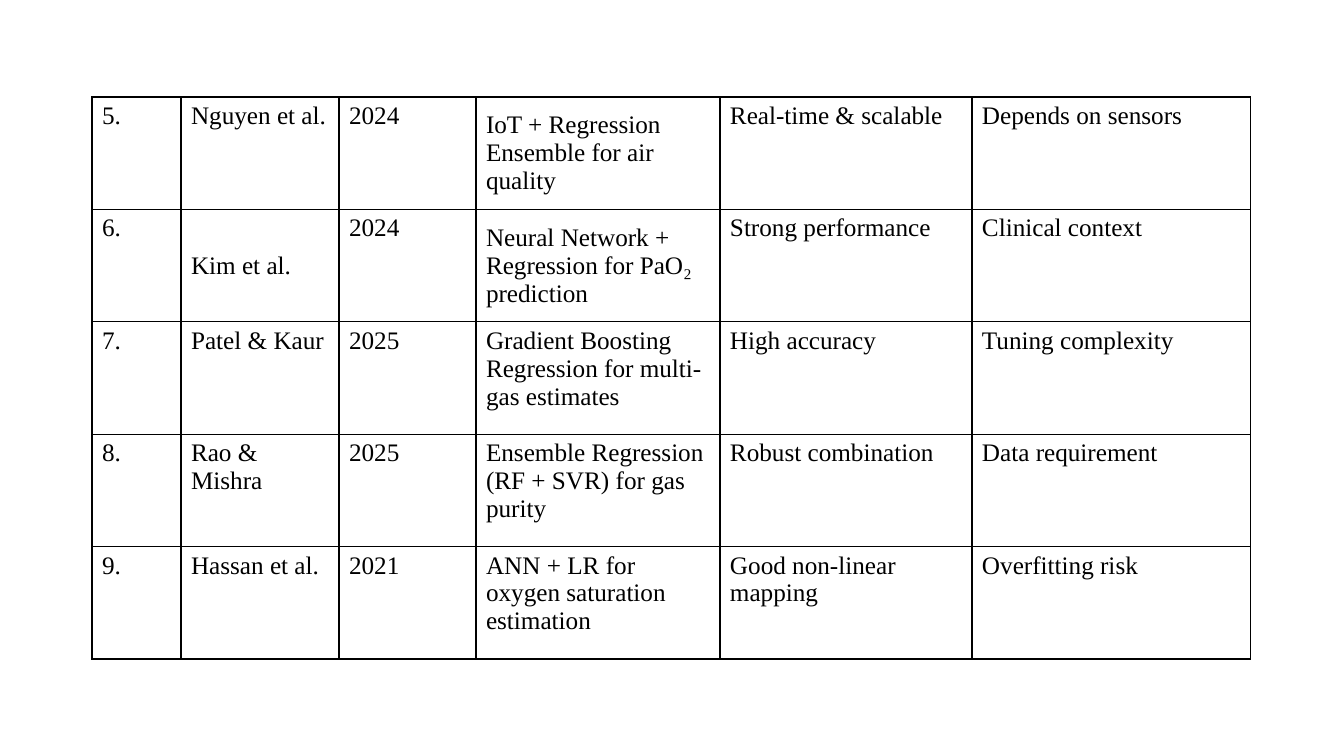
import pptx
import pptx.util
import pptx.dml.color
import pptx.enum.text
import pptx.oxml
import pptx.oxml.ns

PX = 914400 / 100.8
THEME = {"font": "Times New Roman", "size": 18, "text": "000000",
         "border": "000000", "border_width": 1}


def px(n):
    return pptx.util.Emu(round(n * PX))


def add_borders(cell):
    tcPr = cell._tc.get_or_add_tcPr()
    for side in ("lnL", "lnR", "lnT", "lnB"):
        tcPr.append(pptx.oxml.parse_xml(
            f'<a:{side} {pptx.oxml.ns.nsdecls("a")} w="{pptx.util.Pt(THEME["border_width"])}">'
            f'<a:solidFill><a:srgbClr val="{THEME["border"]}"/></a:solidFill></a:{side}>'))


# Slide
prs = pptx.Presentation()
prs.slide_width, prs.slide_height = px(1344), px(756)
s = prs.slides.add_slide(prs.slide_layouts[6])

# Literature survey: number, authors, year, method, strength, limitation
studies = [
    ("5.", "Nguyen et al.", "2024", "IoT + Regression Ensemble for air quality",
     "Real-time & scalable", "Depends on sensors"),
    ("6.", "Kim et al.", "2024", "Neural Network + Regression for PaO₂ prediction",
     "Strong performance", "Clinical context"),
    ("7.", "Patel & Kaur", "2025", "Gradient Boosting Regression for multi-gas estimates",
     "High accuracy", "Tuning complexity"),
    ("8.", "Rao & Mishra", "2025", "Ensemble Regression (RF + SVR) for gas purity",
     "Robust combination", "Data requirement"),
    ("9.", "Hassan et al.", "2021", "ANN + LR for oxygen saturation estimation",
     "Good non-linear mapping", "Overfitting risk"),
]
col_widths = [89, 158, 137, 244, 252, 279]
middle_cells = {(0, 3), (1, 1), (1, 3)}

# Table
table = s.shapes.add_table(len(studies), len(col_widths), px(92), px(97),
                           px(sum(col_widths)), px(562)).table
table.first_row = False
table.horz_banding = False
for col, width in zip(table.columns, col_widths):
    col.width = px(width)

# Cells
for i, study in enumerate(studies):
    for j, text in enumerate(study):
        cell = table.cell(i, j)
        add_borders(cell)
        cell.fill.background()
        if (i, j) in middle_cells:
            cell.vertical_anchor = pptx.enum.text.MSO_ANCHOR.MIDDLE
        cell.text_frame.text = text
        r = cell.text_frame.paragraphs[0].runs[0]
        r.font.name = THEME["font"]
        r.font.size = pptx.util.Pt(THEME["size"])
        r.font.color.rgb = pptx.dml.color.RGBColor.from_string(THEME["text"])

prs.save("out.pptx")
